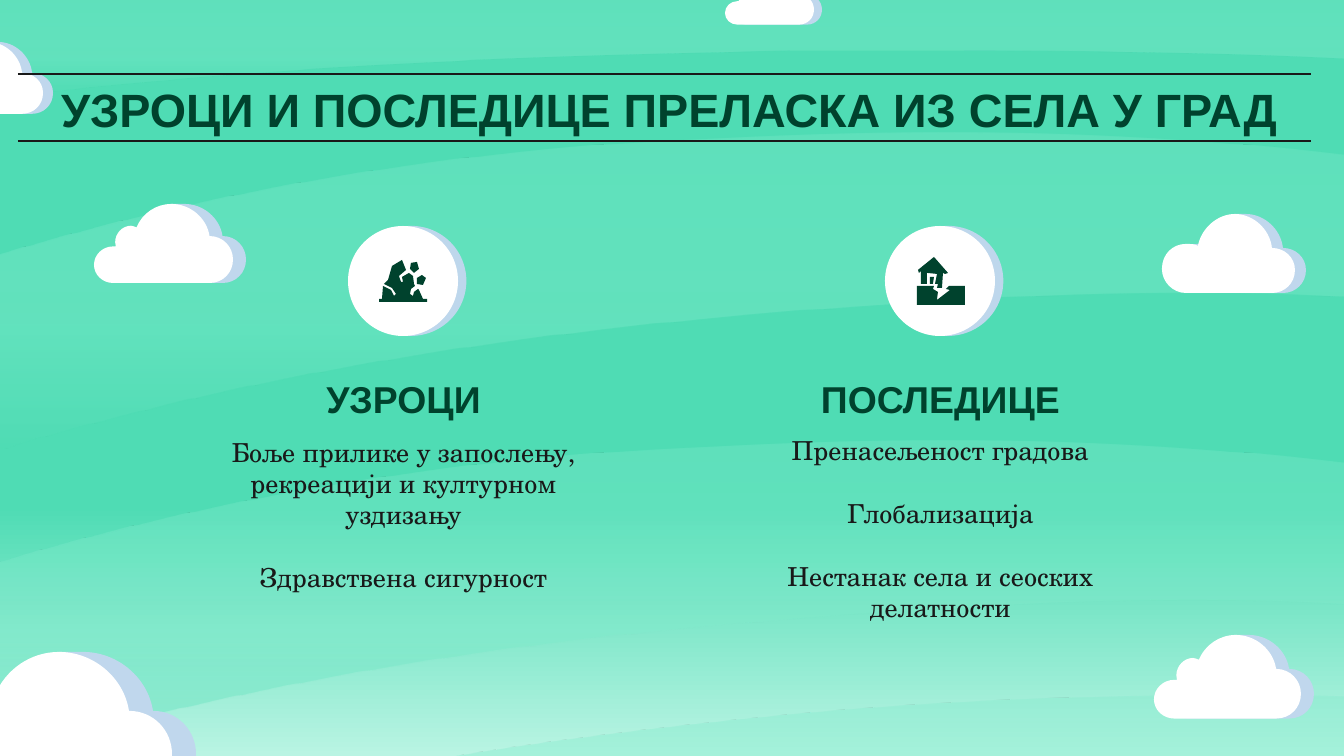
from dataclasses import dataclass

from lxml.etree import SubElement
from pptx import Presentation
from pptx.dml.color import RGBColor
from pptx.enum.shapes import MSO_CONNECTOR, MSO_SHAPE
from pptx.enum.text import MSO_ANCHOR, PP_ALIGN
from pptx.oxml.ns import qn
from pptx.util import Pt

SLIDE_WIDTH, SLIDE_HEIGHT = 1344, 756
EMU_PER_PIXEL = 9144000 / SLIDE_WIDTH


@dataclass(frozen=True)
class Theme:
    green: str = "4FDCB4"
    pale_green: str = "B9F4E3"
    hill_green: str = "80EBCC"
    dark_green: str = "00422D"
    ink: str = "191919"
    white: str = "FFFFFF"
    shade: str = "C0D7ED"
    heading_font: str = "Arial"
    body_font: str = "TeX Gyre Schola"
    title_size: int = 25
    heading_size: int = 20
    body_size: int = 14
    paragraph_gap: float = 16.8
    line_width: float = 0.75


SLOPE = [
    (944, 0), (859, 0, 774, 3, 691, 7), (453, 17, 218, 56, 0, 121), (0, 315),
    (52, 298, 108, 285, 163, 271), (415, 211, 683, 181, 950, 167),
    (1031, 161, 1113, 159, 1195, 159), (1244, 159, 1294, 160, 1344, 163),
    (1344, 22), (1212, 7, 1078, 0, 944, 0),
]
SKYLINE = [
    (0, 0), (0, 102), (24, 99, 50, 95, 74, 93), (305, 69, 544, 59, 790, 55),
    (843, 55, 896, 55, 948, 55), (1081, 55, 1212, 56, 1344, 63), (1344, 0),
]
FOREGROUND = [
    (1261, 0), (1234, 0, 1208, 0, 1181, 0), (1051, 1, 918, 7, 788, 19),
    (534, 43, 274, 81, 43, 157), (28, 163, 13, 167, 0, 172), (0, 187),
    (265, 114, 554, 78, 841, 73), (866, 71, 890, 71, 914, 71),
    (1027, 71, 1139, 77, 1251, 85), (1282, 87, 1313, 90, 1344, 91),
    (1344, 1), (1316, 0, 1288, 0, 1261, 0),
]
HILLS = [(SKYLINE, -4), (SLOPE, 441), (FOREGROUND, 696), (SLOPE, 133)]

FULL_CLOUD = [
    (142, 0), (114, 0, 89, 17, 78, 43), (75, 42, 71, 40, 68, 40),
    (52, 40, 39, 54, 39, 70), (39, 73, 39, 75, 40, 78), (39, 78, 36, 78, 35, 78),
    (16, 78, 0, 93, 0, 112), (0, 130, 16, 145, 35, 145), (212, 145),
    (237, 145, 255, 126, 255, 102), (255, 79, 237, 59, 212, 59),
    (207, 26, 177, 0, 142, 0),
]
SMALL_CLOUD = [
    (73, 0), (55, 0, 39, 15, 36, 32), (34, 30, 28, 30, 24, 30),
    (11, 30, 0, 40, 0, 55), (0, 68, 11, 79, 24, 79), (110, 79),
    (122, 79, 133, 70, 133, 56), (133, 43, 122, 34, 110, 34),
    (108, 15, 91, 0, 73, 0),
]
CLOUDS = [
    (FULL_CLOUD, -83, 652, 255, 24),
    (SMALL_CLOUD, -78, 42, 121, 10),
    (FULL_CLOUD, 725, -26, 89, 8),
    (FULL_CLOUD, 1154, 635, 147, 13),
    (FULL_CLOUD, 94, 204, 139, 13),
    (SMALL_CLOUD, 1162, 214, 133, 11),
]

ROCKFALL = [
    [(402, 260), (392, 266), (388, 280), (384, 284), (392, 288), (396, 294),
     (394, 296), (391, 290), (383, 286), (382, 299), (379, 299), (379, 302),
     (427, 302), (427, 299), (423, 299), (419, 290), (418, 289), (414, 292),
     (413, 296), (410, 294), (411, 289), (415, 286), (414, 284), (413, 276),
     (409, 273), (402, 277), (403, 282), (401, 282), (399, 276), (406, 270)],
    [(422, 275), (417, 278), (417, 284), (423, 285), (426, 278)],
    [(417, 262), (411, 263), (410, 269), (414, 273), (419, 269)],
]
CRACKED_HOUSE = [
    [(930, 277), (930, 284), (933, 284), (934, 277)],
    [(934, 257), (918, 270), (919, 273), (921, 271), (921, 284), (927, 284),
     (927, 273), (937, 274), (935, 284), (938, 284), (937, 288), (942, 288),
     (943, 273), (945, 274), (948, 273)],
    [(917, 286), (917, 305), (965, 305), (965, 286), (949, 286), (946, 289),
     (950, 290), (937, 300), (938, 292), (933, 289), (934, 286)],
]
COLUMNS = [
    (190, "УЗРОЦИ", ROCKFALL, 173,
     ["Боље прилике у запослењу, рекреацији и културном уздизању",
      "Здравствена сигурност"]),
    (727, "ПОСЛЕДИЦЕ", CRACKED_HOUSE, 202,
     ["Пренасељеност градова", "Глобализација",
      "Нестанак села и сеоских делатности"]),
]


def emu(pixels):
    return round(pixels * EMU_PER_PIXEL)


def move(outline, left, top, scale=1):
    return [tuple((top if index % 2 else left) + value * scale
                  for index, value in enumerate(segment)) for segment in outline]


def write_text(frame, paragraphs, *, font, size, color, bold=False, gap=0):
    for index, text in enumerate(paragraphs):
        paragraph = frame.paragraphs[0] if index == 0 else frame.add_paragraph()
        paragraph.alignment = PP_ALIGN.CENTER
        paragraph.space_before = Pt(gap if index else 0)
        run = paragraph.add_run()
        run.text = text
        run.font.name = font
        run.font.size = Pt(size)
        run.font.bold = bold
        run.font.color.rgb = RGBColor.from_string(color)


def apply_gradient(fill, owner, stops, angle):
    fill.gradient()
    fill.gradient_angle = angle
    stop_list = next(owner.iter(qn("a:gsLst")))
    for stop in list(stop_list):
        stop_list.remove(stop)
    for position, color, opacity in stops:
        stop = SubElement(stop_list, qn("a:gs"), pos=str(position * 1000))
        value = SubElement(stop, qn("a:srgbClr"), val=color)
        SubElement(value, qn("a:alpha"), val=str(opacity * 1000))


def bend(shape, segments):
    for line, segment in zip(list(shape.element.iter(qn("a:lnTo"))), segments):
        if len(segment) == 2:
            continue
        curve = line.makeelement(qn("a:cubicBezTo"))
        for x, y in zip(segment[::2], segment[1::2]):
            SubElement(curve, qn("a:pt"), x=str(emu(x) - shape.left), y=str(emu(y) - shape.top))
        line.getparent().replace(line, curve)


class SlideBuilder:
    def __init__(self, slide, theme):
        self.slide = slide
        self.theme = theme

    def background(self):
        theme = self.theme
        stops = [(0, theme.pale_green, 100), (33, theme.green, 100), (100, theme.green, 100)]
        apply_gradient(self.slide.background.fill, self.slide.element, stops, 90)

    def outline(self, segments, color=None):
        corners = [(emu(segment[-2]), emu(segment[-1])) for segment in segments]
        builder = self.slide.shapes.build_freeform(*corners[0], scale=1.0)
        builder.add_line_segments(corners[1:], close=True)
        shape = builder.convert_to_shape()
        bend(shape, segments[1:])
        shape.shadow.inherit = False
        shape.line.fill.background()
        if color:
            shape.fill.solid()
            shape.fill.fore_color.rgb = RGBColor.from_string(color)
        return shape

    def hill(self, segments, top):
        theme = self.theme
        shape = self.outline(move(segments, 0, top))
        stops = [(0, theme.hill_green, 32), (60, theme.hill_green, 39), (100, theme.green, 42)]
        apply_gradient(shape.fill, shape.element, stops, 270)

    def cloud(self, segments, left, top, width, offset):
        scale = width / max(segment[-2] for segment in segments)
        front = move(segments, left, top, scale)
        back = move(front, offset, 0)
        self.outline([front[0], back[1][-2:], *back[2:]], self.theme.shade)
        self.outline(front, self.theme.white)

    def rule(self, left, right, y):
        line = self.slide.shapes.add_connector(
            MSO_CONNECTOR.STRAIGHT, emu(left), emu(y), emu(right), emu(y))
        line.line.width = Pt(self.theme.line_width)
        line.line.color.rgb = RGBColor.from_string(self.theme.ink)
        SubElement(line.element.spPr, qn("a:effectLst"))

    def badge(self, left, top, size):
        shape = self.slide.shapes.add_shape(
            MSO_SHAPE.OVAL, emu(left), emu(top), emu(size), emu(size))
        shape.fill.solid()
        shape.fill.fore_color.rgb = RGBColor.from_string(self.theme.white)
        shape.line.fill.background()
        shape.shadow.inherit = False
        effects = shape.element.spPr.find(qn("a:effectLst"))
        shadow = SubElement(effects, qn("a:outerShdw"), blurRad="0", dist="57150",
                            dir="21540000", algn="bl", rotWithShape="0")
        color = SubElement(shadow, qn("a:srgbClr"), val=self.theme.shade)
        SubElement(color, qn("a:alpha"), val="99000")

    def text(self, left, top, width, height, paragraphs, **text_format):
        box = self.slide.shapes.add_textbox(emu(left), emu(top), emu(width), emu(height))
        frame = box.text_frame
        frame.word_wrap = True
        frame.vertical_anchor = MSO_ANCHOR.MIDDLE
        frame.margin_left = frame.margin_right = emu(13)
        frame.margin_top = frame.margin_bottom = emu(13)
        write_text(frame, paragraphs, **text_format)


def main():
    presentation = Presentation()
    presentation.slide_width = emu(SLIDE_WIDTH)
    presentation.slide_height = emu(SLIDE_HEIGHT)
    theme = Theme()
    builder = SlideBuilder(presentation.slides.add_slide(presentation.slide_layouts[6]), theme)
    builder.background()
    for hill in HILLS:
        builder.hill(*hill)
    for cloud in CLOUDS:
        builder.cloud(*cloud)
    heading = {"font": theme.heading_font, "color": theme.dark_green, "bold": True}
    builder.text(18, 66, 1302, 85, ["УЗРОЦИ И ПОСЛЕДИЦЕ ПРЕЛАСКА ИЗ СЕЛА У ГРАД"],
                 size=theme.title_size, **heading)
    for y in (74, 141):
        builder.rule(18, 1311, y)
    for left, name, icon, height, paragraphs in COLUMNS:
        builder.badge(left + 158, 226, 110)
        for points in icon:
            builder.outline(points, theme.dark_green)
        builder.text(left, 370, 427, 58, [name], size=theme.heading_size, **heading)
        builder.text(left, 428, 427, height, paragraphs, font=theme.body_font,
                     size=theme.body_size, color=theme.ink, gap=theme.paragraph_gap)
    presentation.save("out.pptx")


if __name__ == "__main__":
    main()
